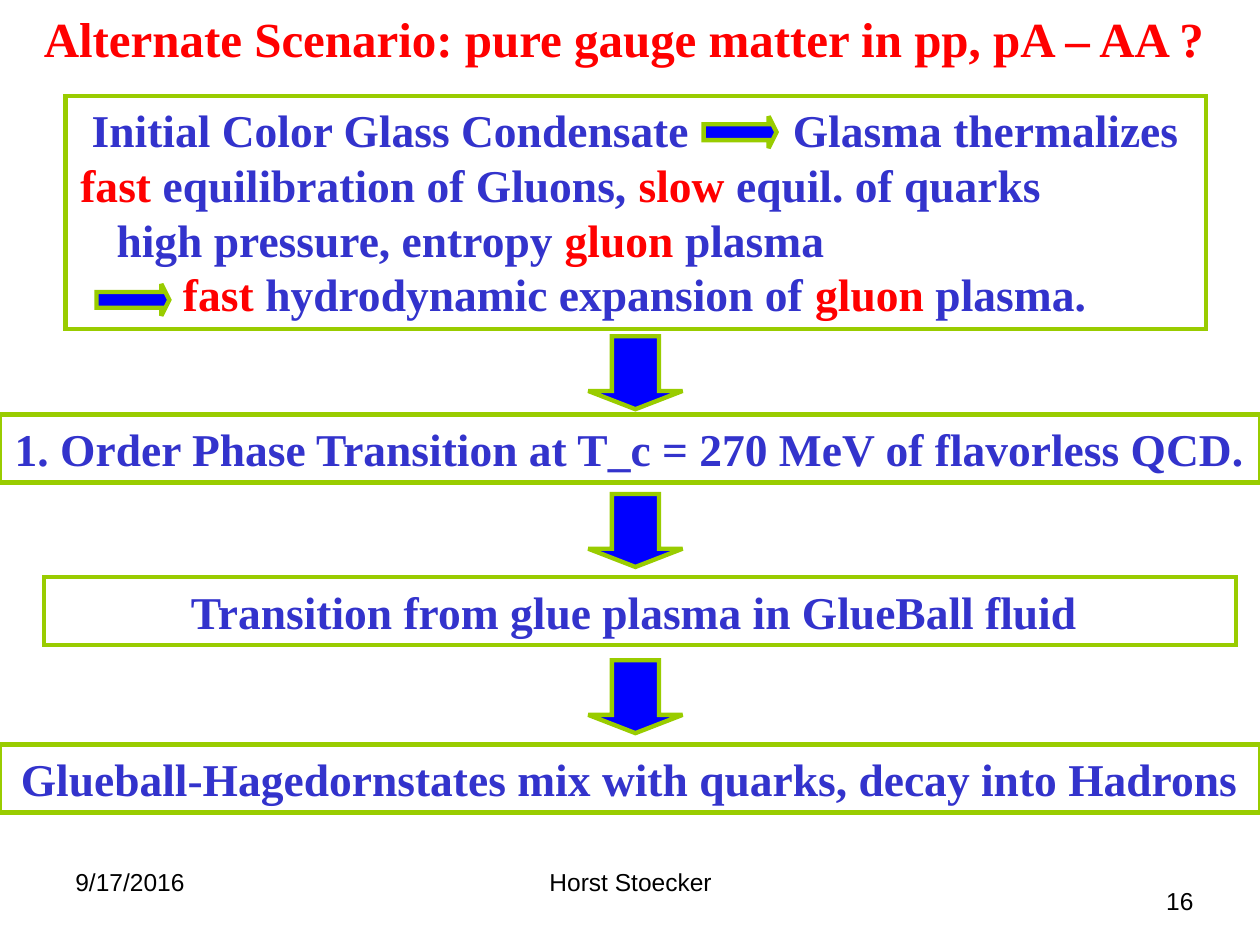
from dataclasses import dataclass

from lxml.etree import SubElement
from pptx import Presentation
from pptx.dml.color import RGBColor
from pptx.enum.shapes import MSO_SHAPE
from pptx.enum.text import MSO_ANCHOR, MSO_AUTO_SIZE, PP_ALIGN
from pptx.oxml.ns import qn
from pptx.util import Cm, Pt


@dataclass(frozen=True)
class Theme:
    """Colours, fonts and type sizes of the slide."""

    red: RGBColor = RGBColor(0xFF, 0x00, 0x00)
    violet: RGBColor = RGBColor(0x33, 0x33, 0xCC)
    blue: RGBColor = RGBColor(0x00, 0x00, 0xFF)
    green: RGBColor = RGBColor(0x99, 0xCC, 0x00)
    white: RGBColor = RGBColor(0xFF, 0xFF, 0xFF)
    black: RGBColor = RGBColor(0x00, 0x00, 0x00)
    serif: str = "Times New Roman"
    sans: str = "Arial"
    title_size: Pt = Pt(28)
    body_size: Pt = Pt(26)
    footer_size: Pt = Pt(14)
    line_spacing: Pt = Pt(31.3)
    arrow_gap: Pt = Pt(52.4)
    outline: Pt = Pt(2.5)


class FlowSlide:
    """Draws the elements of a flow chart on one slide."""

    def __init__(self, presentation, theme):
        """Add a title-only slide."""
        self.theme = theme
        self.slide = presentation.slides.add_slide(presentation.slide_layouts[5])

    def add_run(self, paragraph, text, color, size, name, bold=True):
        """Append and return one formatted run."""
        run = paragraph.add_run()
        run.text = text
        run.font.name = name
        run.font.size = size
        run.font.bold = bold
        run.font.color.rgb = color
        return run

    def prepare_frame(self, shape, anchor):
        """Set wrapping, anchor and fixed size of a text frame."""
        frame = shape.text_frame
        frame.word_wrap = True
        frame.auto_size = MSO_AUTO_SIZE.NONE
        frame.vertical_anchor = anchor
        return frame

    def title(self, text, left, top, width, height):
        """Place and fill the title placeholder."""
        shape = self.slide.shapes.title
        shape.left, shape.top, shape.width, shape.height = map(Cm, (left, top, width, height))
        paragraph = self.prepare_frame(shape, MSO_ANCHOR.MIDDLE).paragraphs[0]
        paragraph.alignment = PP_ALIGN.CENTER
        theme = self.theme
        self.add_run(paragraph, text, theme.red, theme.title_size, theme.serif)

    def outlined(self, kind, fill, left, top, width, height):
        """Add a green-outlined, sharp-cornered shape with an optional fill."""
        shape = self.slide.shapes.add_shape(kind, *map(Cm, (left, top, width, height)))
        shape.shadow.inherit = False
        shape.line.color.rgb = self.theme.green
        shape.line.width = self.theme.outline
        SubElement(shape.line._get_or_add_ln(), qn("a:miter"), lim="800000")
        if fill is None:
            shape.fill.background()
        else:
            shape.fill.solid()
            shape.fill.fore_color.rgb = fill
        return shape

    def step(self, text, left, top, width, height):
        """Add a box with one centred line."""
        theme = self.theme
        shape = self.outlined(MSO_SHAPE.RECTANGLE, theme.white, left, top, width, height)
        paragraph = self.prepare_frame(shape, MSO_ANCHOR.MIDDLE).paragraphs[0]
        paragraph.alignment = PP_ALIGN.CENTER
        self.add_run(paragraph, text, theme.violet, theme.body_size, theme.serif)

    def scenario(self, lines, left, top, width, height):
        """Add a box of indented lines; a run of one space leaves room for an arrow."""
        theme = self.theme
        shape = self.outlined(MSO_SHAPE.RECTANGLE, None, left, top, width, height)
        frame = self.prepare_frame(shape, MSO_ANCHOR.TOP)
        for index, (indent, runs) in enumerate(lines):
            paragraph = frame.add_paragraph() if index else frame.paragraphs[0]
            paragraph.alignment = PP_ALIGN.LEFT
            paragraph.line_spacing = theme.line_spacing
            properties = paragraph._p.get_or_add_pPr()
            properties.set("marL", "0")
            properties.set("indent", str(Cm(indent)))
            for text, stressed in runs:
                color = theme.red if stressed else theme.violet
                run = self.add_run(paragraph, text, color, theme.body_size, theme.serif)
                if text == " ":
                    spacing = round(theme.arrow_gap.pt * 100)
                    run._r.get_or_add_rPr().set("spc", str(spacing))

    def arrow(self, left, top, width, height, rotation=0):
        """Add a block arrow that points down unless rotated."""
        shape = self.outlined(
            MSO_SHAPE.DOWN_ARROW, self.theme.blue, left, top, width, height)
        shape.adjustments[0] = 0.5
        shape.adjustments[1] = 0.25
        shape.rotation = rotation

    def footer(self, text, alignment, left, top, width, height):
        """Add a footer text."""
        shape = self.slide.shapes.add_textbox(*map(Cm, (left, top, width, height)))
        paragraph = self.prepare_frame(shape, MSO_ANCHOR.TOP).paragraphs[0]
        paragraph.alignment = alignment
        theme = self.theme
        self.add_run(paragraph, text, theme.black, theme.footer_size, theme.sans, False)


def main():
    """Build and save the slide."""
    presentation = Presentation()
    presentation.slide_width, presentation.slide_height = Cm(25.4), Cm(19.05)
    flow = FlowSlide(presentation, Theme())

    flow.title("Alternate Scenario: pure gauge matter in pp, pA – AA ? ", 0, 0.03, 25.4, 1.45)
    lines = [
        (0.28, [("Initial Color Glass Condensate", False), (" ", False),
                ("Glasma thermalizes", False)]),
        (0.05, [("fast", True), (" equilibration of Gluons, ", False),
                ("slow ", True), ("equil. of quarks", False)]),
        (0.78, [("high pressure, entropy ", False), ("gluon", True), (" plasma", False)]),
        (2.12, [("fast", True), (" hydrodynamic expansion of ", False),
                ("gluon", True), (" plasma.", False)]),
    ]
    flow.scenario(lines, 1.32, 1.93, 22.99, 4.7)

    steps = [
        ("1. Order Phase Transition at T_c = 270 MeV of flavorless QCD. ", 0, 8.36, 25.4),
        ("Transition from glue plasma in GlueBall fluid ", 0.89, 11.63, 24.03),
        ("Glueball-Hagedornstates mix with quarks, decay into Hadrons", 0, 15.01, 25.4),
    ]
    for text, left, top, width in steps:
        flow.step(text, left, top, width, 1.37)
    for top in (6.78, 9.96, 13.31):
        flow.arrow(11.86, top, 1.9, 1.47)
    for left, top in ((14.6, 1.93), (2.36, 5.31)):
        flow.arrow(left, top, 0.64, 1.47, 270)

    flow.footer("9/17/2016", PP_ALIGN.LEFT, 1.27, 17.35, 5.92, 1.32)
    flow.footer("Horst Stoecker", PP_ALIGN.CENTER, 8.69, 17.35, 8.05, 1.32)
    flow.footer("16", PP_ALIGN.RIGHT, 18.39, 17.73, 5.92, 1.32)
    presentation.save("out.pptx")


if __name__ == "__main__":
    main()
